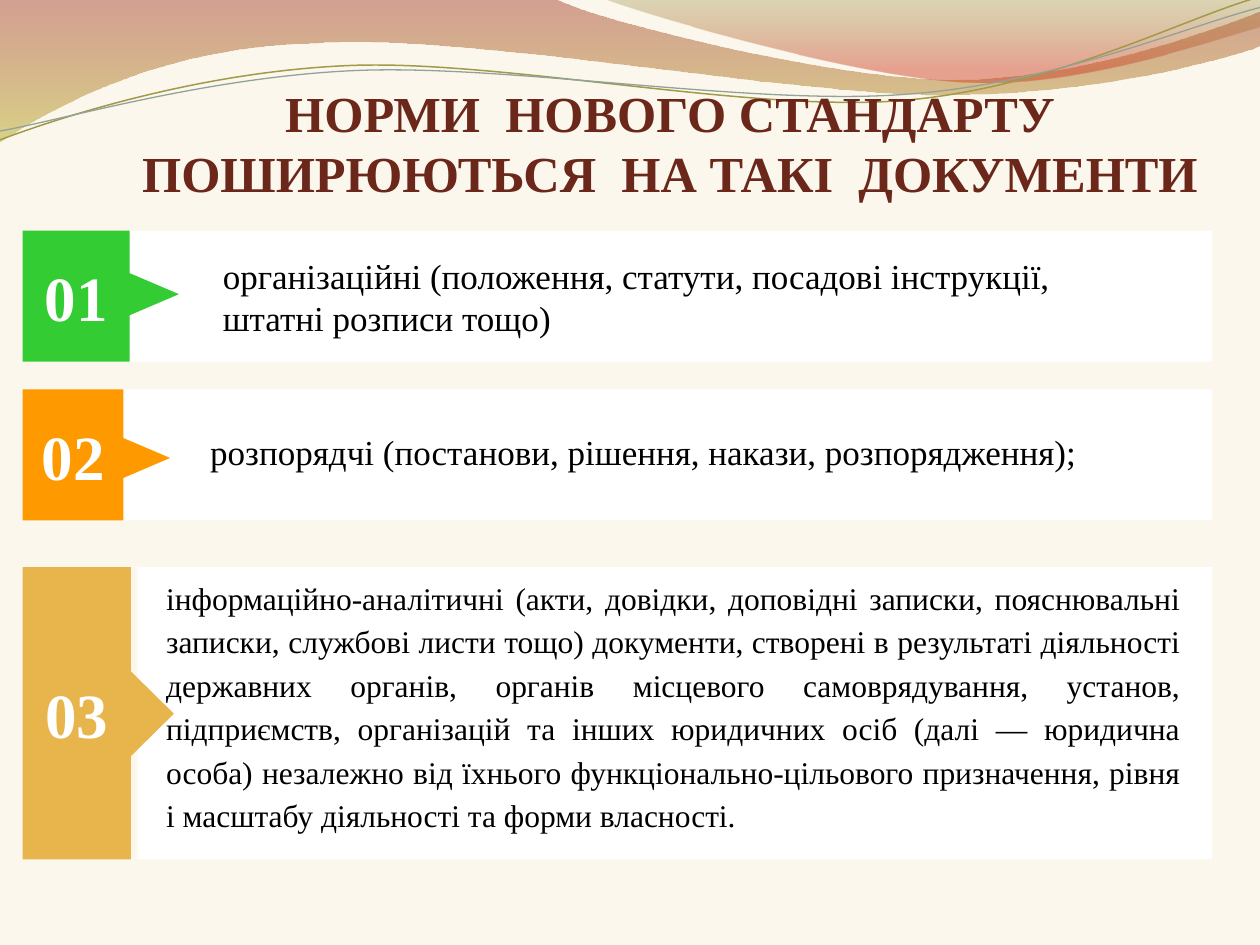
import math

from lxml import etree
from pptx import Presentation
from pptx.dml.color import RGBColor
from pptx.enum import shapes, text
from pptx.oxml.ns import qn
from pptx.util import Inches, Pt

FONT = "Times New Roman"
COLORS = {
    "background": "FBF7EC", "title": "6C271B", "text": "000000", "white": "FFFFFF",
    "green": "33CC33", "orange": "FF9900", "gold": "E8B54D",
    "olive": "A09A49", "gray": "93A299",
    "brick": "A43724", "lime": "BDB333", "moss": "918A33", "red": "D0381E",
}
TITLE = "НОРМИ  НОВОГО СТАНДАРТУ ПОШИРЮЮТЬСЯ  НА ТАКІ  ДОКУМЕНТИ"
ROWS = [
    {"number": "01", "color": "green", "top": 1.83, "height": 1.04,
     "panel_left": 1.01, "tab_width": 0.85, "arrow": (1.04, 2.13, 0.35, 0.41),
     "box": (1.67, 1.97, 7.34, 0.77), "format": {"size": 20},
     "text": "організаційні (положення, статути, посадові інструкції, штатні розписи тощо)"},
    {"number": "02", "color": "orange", "top": 3.09, "height": 1.04,
     "panel_left": 0.96, "tab_width": 0.8, "arrow": (0.97, 3.43, 0.35, 0.41),
     "box": (1.57, 3.32, 7.14, 0.49),
     "format": {"size": 20, "align": "JUSTIFY", "spacing": 1.15, "after": 10},
     "text": "розпорядчі (постанови, рішення, накази, розпорядження);"},
    {"number": "03", "color": "gold", "top": 4.5, "height": 2.32,
     "panel_left": 1.09, "tab_width": 0.86, "arrow": (0.8, 5.47, 0.77, 0.39),
     "box": (1.22, 4.5, 8.25, 2.19),
     "format": {"size": 18, "align": "JUSTIFY", "spacing": 1.15, "after": 10},
     "text": "інформаційно-аналітичні (акти, довідки, доповідні записки, пояснювальні записки, "
             "службові листи тощо) документи, створені в результаті діяльності державних органів, "
             "органів місцевого самоврядування, установ, підприємств, організацій та інших "
             "юридичних осіб (далі — юридична особа) незалежно від їхнього "
             "функціонально-цільового призначення, рівня і масштабу діяльності та форми власності."},
]
ROW_LEFT, ROW_RIGHT = 0.18, 9.62
BANDS = [
    {"start": (0, 0), "stops": [(0, "brick", 45), (1, "lime", 55)],
     "segments": [
         [(4.4, -0.01)],
         [(4.76, 0.17), (6.64, 0.63), (7.58, 0.63)],
         [(8.53, 0.63), (9.58, 0.26), (10, 0.09)],
         [(10.01, 0.36)],
         [(9.83, 0.44), (8.7, 0.76), (7.46, 0.75)],
         [(6.22, 0.75), (3.82, 0.28), (2.57, 0.34)],
         [(1.29, 0.36), (0.46, 0.83), (-0.01, 1.13)]]},
    {"start": (4.79, -0.01), "stops": [(0, "moss", 30), (0.8, "red", 45)],
     "segments": [
         [(5.09, 0.11), (6.82, 0.62), (7.69, 0.65)],
         [(8.56, 0.69), (9.61, 0.32), (10, 0.21)],
         [(10, 0)]]},
]
STRANDS = [
    {"start": (0, 1.11), "line": ("olive", 0.85), "center": (4.99, 0.57),
     "segments": [
         [(0.48, 0.93), (1.58, 0.57), (2.77, 0.52)],
         [(3.95, 0.47), (5.93, 0.89), (7.13, 0.8)],
         [(8.33, 0.71), (9.38, 0.15), (9.98, -0.02)]]},
    {"start": (0, 1.04), "line": ("gray", 0.75), "center": (5, 0.59),
     "segments": [
         [(0.47, 0.96), (1.64, 0.61), (2.83, 0.56)],
         [(4.03, 0.51), (5.97, 0.84), (7.17, 0.75)],
         [(8.36, 0.67), (9.41, 0.21), (10, 0.06)]]},
]
STRAND_TILT = 2.7


def rgb(name):
    return RGBColor.from_string(COLORS[name])


def put_text(sp, content, size=20, color="text", bold=False, align="LEFT", anchor="TOP",
             insets=(0.1, 0.05, 0.1, 0.05), spacing=None, after=None, fit="NONE"):
    tf = sp.text_frame
    tf.word_wrap = True
    tf.auto_size = text.MSO_AUTO_SIZE[fit]
    tf.vertical_anchor = text.MSO_ANCHOR[anchor]
    tf.margin_left, tf.margin_top, tf.margin_right, tf.margin_bottom = map(Inches, insets)
    p = tf.paragraphs[0]
    p.alignment = text.PP_ALIGN[align]
    if spacing:
        p.line_spacing = spacing
    if after:
        p.space_after = Pt(after)
    r = p.add_run()
    r.text = content
    r.font.name, r.font.size, r.font.bold = FONT, Pt(size), bold
    r.font.color.rgb = rgb(color)


def add_block(group, kind, box, color):
    sp = group.shapes.add_shape(shapes.MSO_SHAPE[kind], *map(Inches, box))
    sp.shadow.inherit = False
    sp.fill.solid()
    sp.fill.fore_color.rgb = rgb(color)
    sp.line.fill.background()
    return sp


def turn(point, center, degrees):
    a = math.radians(degrees)
    x, y = point[0] - center[0], point[1] - center[1]
    return (center[0] + x * math.cos(a) - y * math.sin(a),
            center[1] + x * math.sin(a) + y * math.cos(a))


def add_curve(parent, start, segments, close):
    fb = parent.shapes.build_freeform(*map(Inches, start))
    points = [point for segment in segments for point in segment]
    fb.add_line_segments([(Inches(x), Inches(y)) for x, y in points], close=close)
    sp = fb.convert_to_shape()
    sp.shadow.inherit = False
    lines = iter(list(sp._element.iter(qn("a:lnTo"))))
    for segment in segments:
        steps = [next(lines) for _ in segment]
        if len(steps) == 3:
            curve = etree.Element(qn("a:cubicBezTo"))
            steps[0].addprevious(curve)
            for step in steps:
                curve.append(step[0])
                step.getparent().remove(step)
    return sp


def add_band(s, band):
    sp = add_curve(s, band["start"], band["segments"], True)
    sp.line.fill.background()
    sp.fill.gradient()
    sp.fill.gradient_angle = 270
    for stop, (position, color, _) in zip(sp.fill.gradient_stops, band["stops"]):
        stop.position = position
        stop.color.rgb = rgb(color)
    for clr, (_, _, opacity) in zip(sp._element.spPr.iter(qn("a:srgbClr")), band["stops"]):
        etree.SubElement(clr, qn("a:alpha")).set("val", str(opacity * 1000))


def add_strand(group, strand):
    center = strand["center"]
    segments = [[turn(point, center, STRAND_TILT) for point in segment]
                for segment in strand["segments"]]
    sp = add_curve(group, turn(strand["start"], center, STRAND_TILT), segments, False)
    sp.rotation = 360 - STRAND_TILT
    sp.fill.background()
    color, width = strand["line"]
    sp.line.color.rgb = rgb(color)
    sp.line.width = Pt(width)


def add_row(s, row):
    group = s.shapes.add_group_shape()
    top, height, left = row["top"], row["height"], row["panel_left"]
    add_block(group, "RECTANGLE", (left, top, ROW_RIGHT - left, height), "white")
    tab = add_block(group, "RECTANGLE", (ROW_LEFT, top, row["tab_width"], height), row["color"])
    put_text(tab, row["number"], size=36, color="white", bold=True, align="CENTER",
             anchor="MIDDLE", insets=(0.07, 0.04, 0.07, 0.04))
    add_block(group, "ISOSCELES_TRIANGLE", row["arrow"], row["color"]).rotation = 90


def main():
    prs = Presentation()
    prs.slide_width, prs.slide_height = Inches(10), Inches(7.5)
    s = prs.slides.add_slide(prs.slide_layouts[5])
    s.background.fill.solid()
    s.background.fill.fore_color.rgb = rgb("background")
    for band in BANDS:
        add_band(s, band)
    strands = s.shapes.add_group_shape()
    for strand in STRANDS:
        add_strand(strands, strand)
    title = s.shapes.title
    title.left, title.top, title.width, title.height = map(Inches, (0.82, 0.36, 9, 1.25))
    put_text(title, TITLE, size=28.8, color="title", bold=True, align="CENTER",
             anchor="BOTTOM", insets=(0, 0.05, 0, 0))
    s.shapes._spTree.append(title._element)
    for row in ROWS:
        add_row(s, row)
    for row in ROWS:
        box = s.shapes.add_textbox(*map(Inches, row["box"]))
        put_text(box, row["text"], fit="SHAPE_TO_FIT_TEXT", **row["format"])
    prs.save("out.pptx")


if __name__ == "__main__":
    main()
